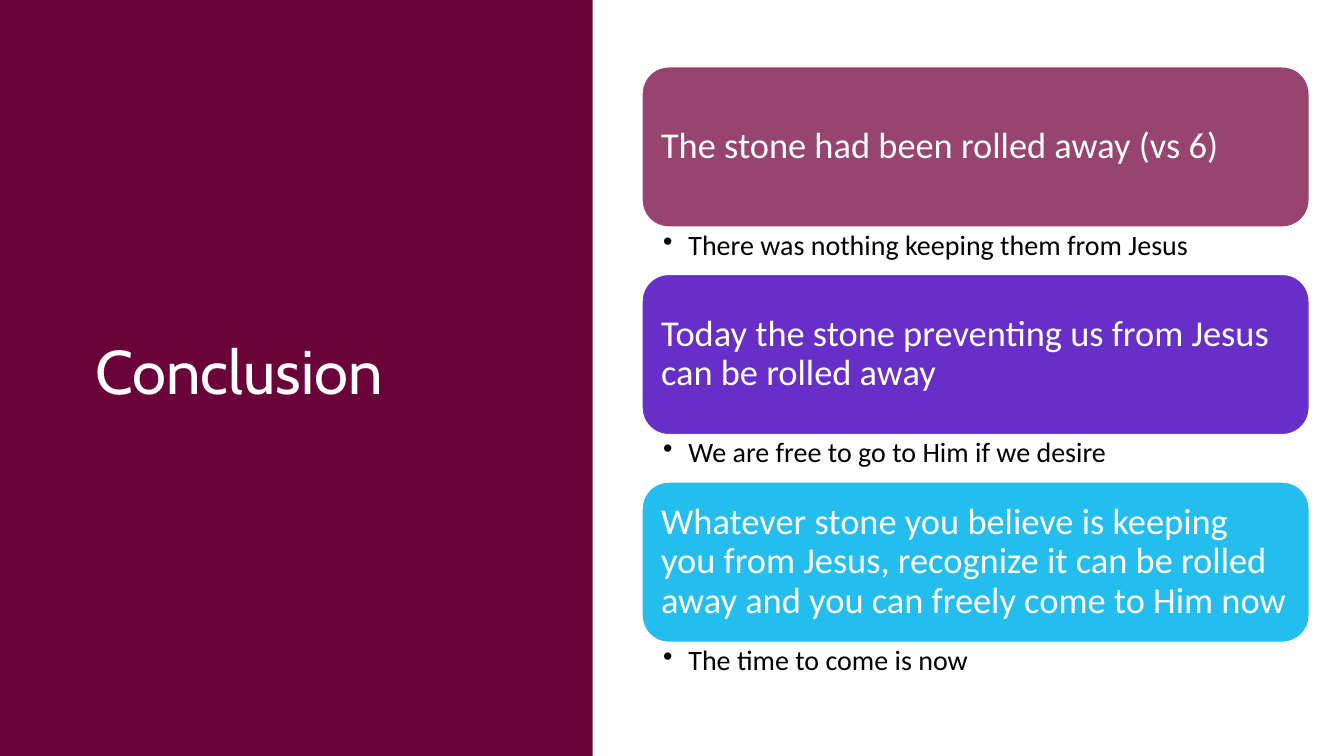
from dataclasses import dataclass

from lxml.etree import SubElement
from pptx import Presentation
from pptx.dml.color import RGBColor
from pptx.enum.shapes import MSO_SHAPE as Preset
from pptx.enum.text import MSO_ANCHOR as Anchor, PP_ALIGN as Align
from pptx.oxml.ns import qn
from pptx.util import Pt


@dataclass(frozen=True)
class Theme:
    panel: str = "6B033B"
    light: str = "FFFFFF"
    dark: str = "000000"
    title_font: str = "Cabin"
    body_font: str = "Calibri"
    title_size: int = 44
    card_size: int = 26
    bullet_size: int = 20


THEME = Theme()
SLIDE_WIDTH, SLIDE_HEIGHT = 960, 540
PANEL_WIDTH = 423.4
LIST_LEFT, LIST_TOP, LIST_WIDTH = 458.6, 47.7, 476.6
CARD_HEIGHT, BULLET_HEIGHT = 114.5, 33.8
POINTS = [
    ("The stone had been rolled away (vs 6)",
     "There was nothing keeping them from Jesus", "97446E"),
    ("Today the stone preventing us from Jesus can be rolled away",
     "We are free to go to Him if we desire", "672FC7"),
    ("Whatever stone you believe is keeping you from Jesus, "
     "recognize it can be rolled away and you can freely come to Him now",
     "The time to come is now", "24BEEE"),
]


def apply_format(target, values):
    for name, value in values.items():
        setattr(target, name, value)


def write_text(shape, text, font, size, color, anchor, insets):
    frame = shape.text_frame
    left, top, right, bottom = map(Pt, insets)
    apply_format(frame, {
        "word_wrap": True, "vertical_anchor": anchor,
        "margin_left": left, "margin_top": top,
        "margin_right": right, "margin_bottom": bottom,
    })
    paragraph = frame.paragraphs[0]
    apply_format(paragraph, {"alignment": Align.LEFT, "line_spacing": 0.9})
    run = paragraph.add_run()
    run.text = text
    apply_format(run.font, {"name": font, "size": Pt(size)})
    run.font.color.rgb = RGBColor.from_string(color)
    return paragraph


def add_block(slide, preset, box, fill):
    shape = slide.shapes.add_shape(preset, *map(Pt, box))
    shape.shadow.inherit = False
    shape.fill.solid()
    shape.fill.fore_color.rgb = RGBColor.from_string(fill)
    shape.line.fill.background()
    return shape


def add_title(slide, text):
    shape = slide.shapes.add_textbox(Pt(61.2), Pt(38.9), Pt(311), Pt(457.9))
    write_text(shape, text, THEME.title_font, THEME.title_size, THEME.light,
               Anchor.MIDDLE, (7.2, 3.6, 7.2, 3.6))


def add_card(slide, top, text, fill):
    box = (LIST_LEFT, top, LIST_WIDTH, CARD_HEIGHT)
    shape = add_block(slide, Preset.ROUNDED_RECTANGLE, box, fill)
    shape.line.color.rgb = RGBColor.from_string(THEME.light)
    shape.line.width = Pt(1)
    write_text(shape, text, THEME.body_font, THEME.card_size, THEME.light,
               Anchor.MIDDLE, (8, 8, 8, 8))


def add_bullet(slide, top, text):
    box = (LIST_LEFT, top, LIST_WIDTH, BULLET_HEIGHT)
    shape = slide.shapes.add_textbox(*map(Pt, box))
    paragraph = write_text(shape, text, THEME.body_font, THEME.bullet_size,
                           THEME.dark, Anchor.TOP, (15.1, 2.9, 14.4, 2.9))
    properties = paragraph._p.get_or_add_pPr()
    properties.set("marL", str(Pt(18)))
    properties.set("indent", str(Pt(-18)))
    SubElement(properties, qn("a:buChar"), char="•")


def main():
    presentation = Presentation()
    apply_format(presentation, {
        "slide_width": Pt(SLIDE_WIDTH), "slide_height": Pt(SLIDE_HEIGHT),
    })
    slide = presentation.slides.add_slide(presentation.slide_layouts[6])
    add_block(slide, Preset.RECTANGLE,
              (0, 0, PANEL_WIDTH, SLIDE_HEIGHT), THEME.panel)
    add_title(slide, "Conclusion")
    for index, (statement, detail, fill) in enumerate(POINTS):
        top = LIST_TOP + index * (CARD_HEIGHT + BULLET_HEIGHT)
        add_card(slide, top, statement, fill)
        add_bullet(slide, top + CARD_HEIGHT, detail)
    presentation.save("out.pptx")


if __name__ == "__main__":
    main()
